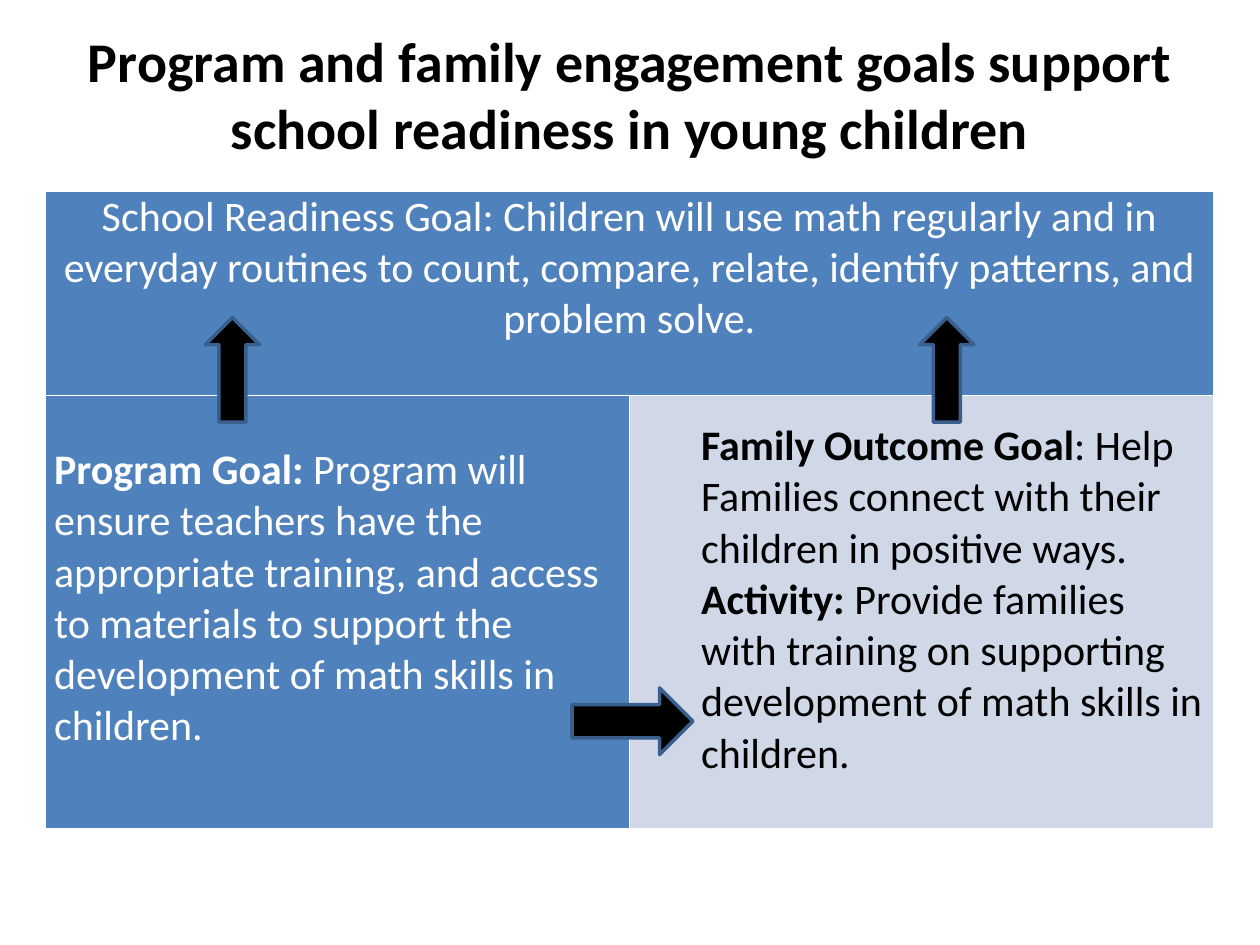
from lxml.etree import SubElement
from pptx import Presentation
from pptx.dml.color import RGBColor
from pptx.enum.shapes import MSO_SHAPE
from pptx.enum.text import MSO_ANCHOR, PP_ALIGN
from pptx.oxml.ns import qn
from pptx.util import Inches, Pt

BLACK = RGBColor(0x00, 0x00, 0x00)
WHITE = RGBColor(0xFF, 0xFF, 0xFF)
BLUE = RGBColor(0x4F, 0x81, 0xBD)
PALE = RGBColor(0xD0, 0xD8, 0xE8)
EDGE = RGBColor(0x3A, 0x5F, 0x8C)

GOAL = ("School Readiness Goal: Children will use math regularly and in "
        "everyday routines to count, compare, relate, identify patterns, "
        "and problem solve.")
PROGRAM = [("Program Goal:", " Program will ensure teachers have the "
            "appropriate training, and access to materials to support the "
            "development of math skills in children.")]
FAMILY = [("Family Outcome Goal", ": Help Families connect with their "
           "children in positive ways."),
          ("Activity: ", "Provide families with training on supporting "
           "development of math skills in children.")]


def write(para, text, size=24, color=BLACK, bold=False):
    run = para.add_run()
    run.text = text
    font = run.font
    font.name, font.size, font.bold = "Calibri", Pt(size), bold
    font.color.rgb = color


def add_title(slide, text):
    title = slide.shapes.title
    title.left, title.top = Inches(0.5), Inches(0.12)
    title.width, title.height = Inches(9), Inches(1.25)
    frame = title.text_frame
    frame.word_wrap = True
    frame.vertical_anchor = MSO_ANCHOR.MIDDLE
    para = frame.paragraphs[0]
    para.alignment = PP_ALIGN.CENTER
    write(para, text, size=32, bold=True)


def style_cell(cell, fill, top=0):
    cell.margin_left = cell.margin_right = Inches(0.07)
    cell.margin_top, cell.margin_bottom = Inches(top), 0
    # Borders go before the fill in the cell properties
    props = cell._tc.get_or_add_tcPr()
    for side in ("a:lnL", "a:lnR", "a:lnT", "a:lnB"):
        line = SubElement(props, qn(side), w=str(Pt(1)))
        paint = SubElement(line, qn("a:solidFill"))
        SubElement(paint, qn("a:srgbClr"), val=str(WHITE))
    cell.fill.solid()
    cell.fill.fore_color.rgb = fill


def fill_goals(cell, goals, color, indent=0):
    frame = cell.text_frame
    for i, (label, body) in enumerate(goals):
        para = frame.add_paragraph() if i else frame.paragraphs[0]
        para._p.get_or_add_pPr().set("marL", str(Inches(indent)))
        write(para, label, color=color, bold=True)
        write(para, body, color=color)


def add_goals(slide):
    table = slide.shapes.add_table(2, 2, Inches(0.36), Inches(1.52),
                                   Inches(9.27), Inches(5.06)).table
    for row, high in zip(table.rows, (1.62, 3.44)):
        row.height = Inches(high)
    for row in range(2):
        for col in range(2):
            last = row and col
            style_cell(table.cell(row, col), PALE if last else BLUE,
                       top=row * (0.2 if col else 0.39))

    # School readiness goal spans both columns
    head = table.cell(0, 0)
    head.merge(table.cell(0, 1))
    para = head.text_frame.paragraphs[0]
    para.alignment = PP_ALIGN.CENTER
    write(para, GOAL, color=WHITE)

    fill_goals(table.cell(1, 0), PROGRAM, WHITE)
    fill_goals(table.cell(1, 1), FAMILY, BLACK, indent=0.5)


def add_arrow(slide, kind, left, top, width, height):
    arrow = slide.shapes.add_shape(kind, Inches(left), Inches(top),
                                   Inches(width), Inches(height))
    arrow.shadow.inherit = False
    arrow.fill.solid()
    arrow.fill.fore_color.rgb = BLACK
    arrow.line.color.rgb = EDGE
    arrow.line.width = Pt(2)


def main():
    deck = Presentation()
    deck.slide_width, deck.slide_height = Inches(10), Inches(7.5)
    slide = deck.slides.add_slide(deck.slide_layouts[5])
    add_title(slide, "Program and family engagement goals support "
                     "school readiness in young children")
    add_goals(slide)
    # Both lower goals feed the top one; program leads to family
    for left in (1.63, 7.3):
        add_arrow(slide, MSO_SHAPE.UP_ARROW, left, 2.52, 0.43, 0.83)
    add_arrow(slide, MSO_SHAPE.RIGHT_ARROW, 4.54, 5.46, 0.96, 0.53)
    deck.save("out.pptx")


if __name__ == "__main__":
    main()
